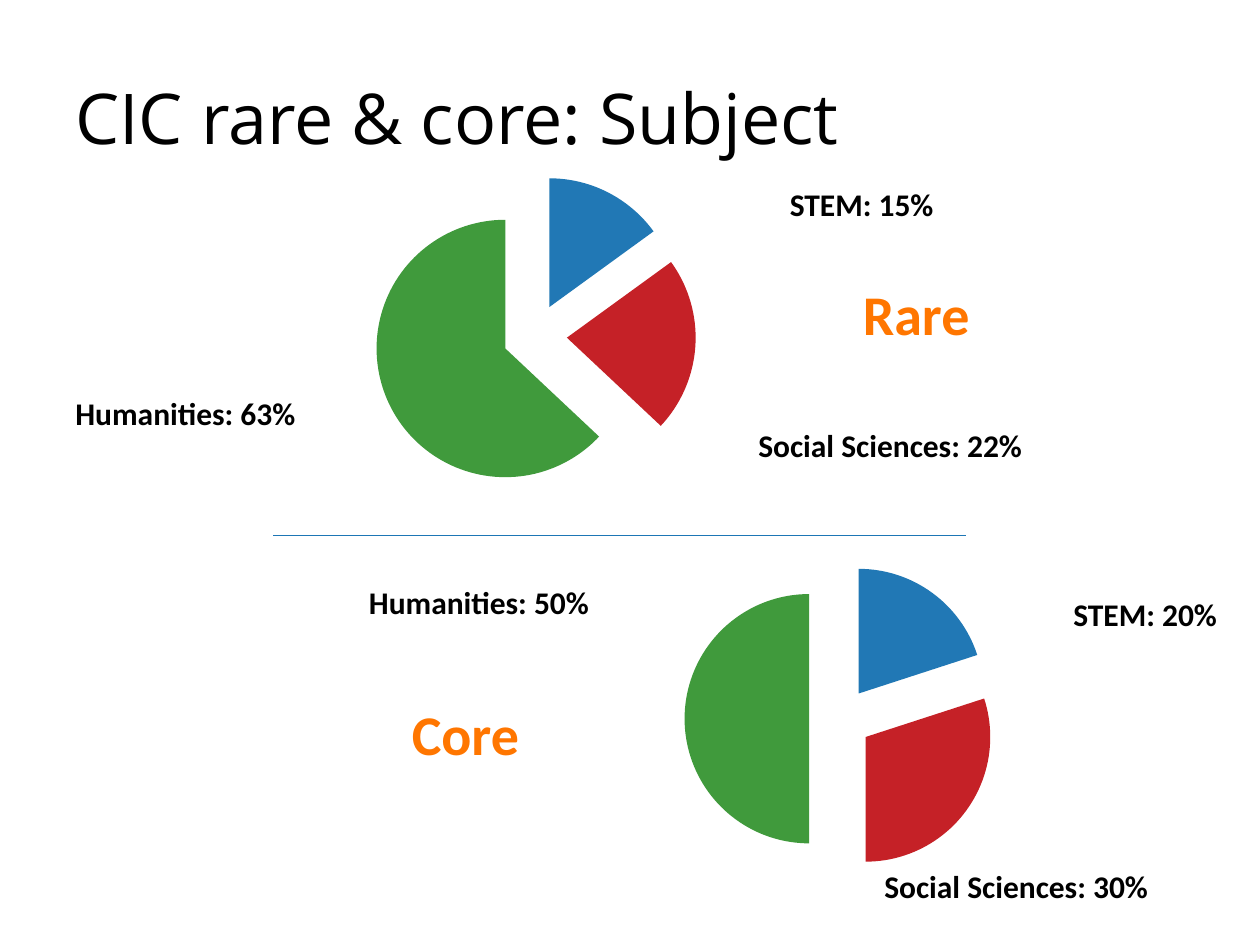
from dataclasses import dataclass

from lxml import etree
from pptx import Presentation
from pptx.chart.data import CategoryChartData
from pptx.dml.color import RGBColor
from pptx.enum.chart import XL_CHART_TYPE
from pptx.enum.shapes import MSO_CONNECTOR
from pptx.enum.text import MSO_ANCHOR, MSO_AUTO_SIZE
from pptx.oxml.ns import qn
from pptx.slide import Slide
from pptx.util import Inches, Pt

BLACK = RGBColor(0x00, 0x00, 0x00)
ORANGE = RGBColor(0xFF, 0x76, 0x00)
RULE_BLUE = RGBColor(0x1D, 0x76, 0xB5)
STEM_BLUE = RGBColor(0x21, 0x78, 0xB5)
SOCIAL_RED = RGBColor(0xC5, 0x21, 0x27)
HUMANITIES_GREEN = RGBColor(0x40, 0x9A, 0x3C)

EXPLOSION = 25


@dataclass(frozen=True)
class Subject:
    name: str
    color: RGBColor
    label_width: float


@dataclass(frozen=True)
class Collection:
    name: str
    name_at: tuple[float, float]
    pie_box: tuple[float, float, float, float]
    shares: tuple[int, int, int]
    labels_at: tuple[tuple[float, float], ...]


SUBJECTS = (
    Subject("STEM", STEM_BLUE, 1.41),
    Subject("Social Sciences", SOCIAL_RED, 2.37),
    Subject("Humanities", HUMANITIES_GREEN, 2.02),
)

COLLECTIONS = (
    Collection("Core", (3.17, 5.5), (4.17, 4.33, 5, 2.75), (20, 30, 50),
               ((8.42, 4.67), (6.92, 6.83), (2.83, 4.58))),
    Collection("Rare", (6.75, 2.17), (1.83, 1.25, 4.83, 2.83), (15, 22, 63),
               ((6.17, 1.42), (5.92, 3.33), (0.5, 3.08))),
)


def add_text(slide: Slide, text: str, *, box: tuple[float, float, float, float],
             size: int = 18, font: str = "Calibri", color: RGBColor = BLACK,
             bold: bool = True, wrap: bool = False,
             anchor: MSO_ANCHOR = MSO_ANCHOR.TOP) -> None:
    frame = slide.shapes.add_textbox(*map(Inches, box)).text_frame
    frame.word_wrap = wrap
    frame.auto_size = MSO_AUTO_SIZE.NONE if wrap else MSO_AUTO_SIZE.SHAPE_TO_FIT_TEXT
    frame.vertical_anchor = anchor
    run = frame.paragraphs[0].add_run()
    run.text = text
    run.font.name = font
    run.font.size = Pt(size)
    run.font.bold = bold
    run.font.color.rgb = color


def add_pie(slide: Slide, collection: Collection) -> None:
    shares = CategoryChartData()
    shares.categories = [str(i + 1) for i in range(len(SUBJECTS))]
    shares.add_series("Series 1", collection.shares)
    pie = slide.shapes.add_chart(
        XL_CHART_TYPE.PIE, *map(Inches, collection.pie_box), shares).chart
    pie.has_legend = False
    pie.has_title = False
    pie.font.name = "Calibri"
    pie.font.size = Pt(10)
    pie.font.color.rgb = BLACK
    plot = pie.plots[0]
    plot.vary_by_categories = True
    series = plot.series[0]
    explosion = etree.Element(qn("c:explosion"), val=str(EXPLOSION))
    series._element.find(qn("c:tx")).addnext(explosion)
    for i, subject in enumerate(SUBJECTS):
        wedge = series.points[i].format
        wedge.fill.solid()
        wedge.fill.fore_color.rgb = subject.color
        wedge.line.fill.background()


def add_collection(slide: Slide, collection: Collection) -> None:
    add_pie(slide, collection)
    for subject, share, corner in zip(SUBJECTS, collection.shares, collection.labels_at):
        add_text(slide, f"{subject.name}: {share}%",
                 box=(*corner, subject.label_width, 0.4))
    add_text(slide, collection.name, box=(*collection.name_at, 1.06, 0.64),
             size=32, color=ORANGE)


def add_divider(slide: Slide) -> None:
    divider = slide.shapes.add_connector(
        MSO_CONNECTOR.STRAIGHT, Inches(2.17), Inches(4.25), Inches(7.67), Inches(4.25))
    divider.line.color.rgb = RULE_BLUE
    divider.line.width = Pt(0.75)
    etree.SubElement(divider._element.spPr, qn("a:effectLst"))


def main() -> None:
    deck = Presentation()
    deck.slide_width = Inches(10)
    deck.slide_height = Inches(7.5)
    slide = deck.slides.add_slide(deck.slide_layouts[6])
    add_text(slide, "CIC rare & core: Subject", box=(0.5, 0.3, 9, 1.25), size=40,
             font="Open Sans", bold=False, wrap=True, anchor=MSO_ANCHOR.MIDDLE)
    for collection in COLLECTIONS:
        add_collection(slide, collection)
    add_divider(slide)
    deck.save("out.pptx")


if __name__ == "__main__":
    main()
